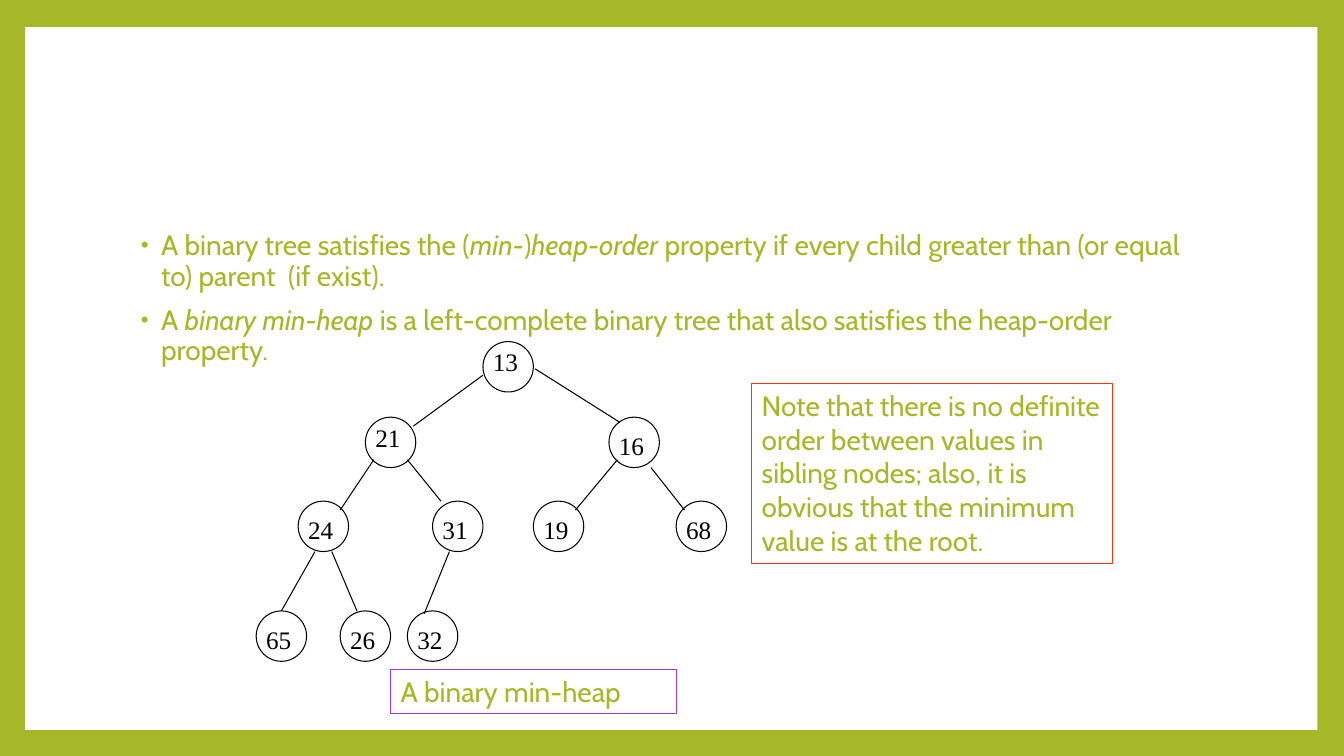
from lxml import etree
from pptx import Presentation
from pptx.dml.color import RGBColor
from pptx.enum import shapes, text
from pptx.oxml import ns
from pptx.util import Pt

GREEN = RGBColor(0xA6, 0xB7, 0x27)
WHITE = RGBColor(0xFF, 0xFF, 0xFF)
BLACK = RGBColor(0, 0, 0)
RED = RGBColor(0xFF, 0x33, 0x00)
PURPLE = RGBColor(0x99, 0x33, 0xFF)

prs = Presentation()
prs.slide_width, prs.slide_height = Pt(960), Pt(540)
s = prs.slides.add_slide(prs.slide_layouts[6])
s.background.fill.solid()
s.background.fill.fore_color.rgb = GREEN


def add_shape(kind, x, y, w, h, line=None):
    sp = s.shapes.add_shape(kind, Pt(x), Pt(y), Pt(w), Pt(h))
    sp.shadow.inherit = False
    sp.fill.background()
    if line is None:
        sp.line.fill.background()
    else:
        sp.line.color.rgb = line
        sp.line.width = Pt(0.75)
    return sp


def style(r, size, font, color):
    r.font.size = Pt(size)
    r.font.name = font
    r.font.color.rgb = color


# White panel inside the green frame
panel = add_shape(shapes.MSO_SHAPE.RECTANGLE, 18, 19.3, 923, 502)
panel.fill.solid()
panel.fill.fore_color.rgb = WHITE

# Definitions: each paragraph is a list of (text, italic)
definitions = [
    [("A binary tree satisfies the (", False), ("min-", True), (")", False),
     ("heap-order ", True),
     ("property if every child greater than (or equal to) parent  (if exist).", False)],
    [("A ", False), ("binary min-heap", True),
     (" is a left-complete binary tree that also satisfies the heap-order property.", False)],
]
tf = s.shapes.add_textbox(Pt(90), Pt(162), Pt(777.6), Pt(318)).text_frame
tf.word_wrap = True
for i, runs in enumerate(definitions):
    p = tf.paragraphs[0] if i == 0 else tf.add_paragraph()
    p.line_spacing = 0.9
    p.space_before = Pt(10 if i else 0)
    for words, italic in runs:
        r = p.add_run()
        r.text = words
        style(r, 20, "Cabin", GREEN)
        r.font.italic = italic
    pPr = p._p.get_or_add_pPr()
    pPr.set("marL", str(Pt(18)))
    pPr.set("indent", str(-Pt(14.4)))
    color = etree.SubElement(pPr, ns.qn("a:buClr"))
    etree.SubElement(color, ns.qn("a:srgbClr"), val=str(GREEN))
    etree.SubElement(pPr, ns.qn("a:buSzPct"), val="80000")
    etree.SubElement(pPr, ns.qn("a:buFont"), typeface="Arial")
    etree.SubElement(pPr, ns.qn("a:buChar"), char="•")

# Heap nodes: value, left, level, drop of the label inside the circle
LEVEL_TOPS = [244, 298, 358, 436.4]
nodes = [
    ("13", 345, 0, 0),
    ("21", 261, 1, 0), ("16", 435, 1, 6),
    ("24", 213, 2, 6), ("31", 309, 2, 6), ("19", 381, 2, 6), ("68", 483, 2, 6),
    ("65", 183, 3, 6), ("26", 243, 3, 6), ("32", 291, 3, 6),
]
for value, x, level, drop in nodes:
    y = LEVEL_TOPS[level]
    add_shape(shapes.MSO_SHAPE.OVAL, x, y, 36, 36, BLACK)
    tf = s.shapes.add_textbox(Pt(x), Pt(y + drop), Pt(42), Pt(29)).text_frame
    tf.word_wrap = True
    tf.text = value
    style(tf.paragraphs[0].runs[0], 18, "Times New Roman", BLACK)

# Edges from parent to child
edges = [
    (345, 268, 295.2, 304.4), (382.3, 263.5, 442.8, 301.7),
    (267, 328.4, 243, 364.4), (291, 328.4, 315, 358),
    (441, 328.4, 411, 364.4), (465, 334, 489, 364.4),
    (225, 394, 201, 436.4), (237, 394, 255, 436.4), (321, 394, 303, 438.4),
]
for ends in edges:
    edge = s.shapes.add_connector(shapes.MSO_CONNECTOR.STRAIGHT, *map(Pt, ends))
    edge.line.color.rgb = BLACK
    edge.line.width = Pt(0.75)
    etree.SubElement(edge._element.spPr, ns.qn("a:effectLst"))

# Note and caption boxes
boxes = [
    ("Note that there is no definite order between values in sibling nodes; "
     "also, it is obvious that the minimum value is at the root.",
     537, 274, 258, 128.5, RED),
    ("A binary min-heap", 279, 478.4, 204, 31.5, PURPLE),
]
for words, x, y, w, h, line in boxes:
    tf = add_shape(shapes.MSO_SHAPE.RECTANGLE, x, y, w, h, line).text_frame
    tf.word_wrap = True
    tf.vertical_anchor = text.MSO_ANCHOR.TOP
    tf.text = words
    p = tf.paragraphs[0]
    p.alignment = text.PP_ALIGN.LEFT
    style(p.runs[0], 20, "Cabin", GREEN)

prs.save("out.pptx")
